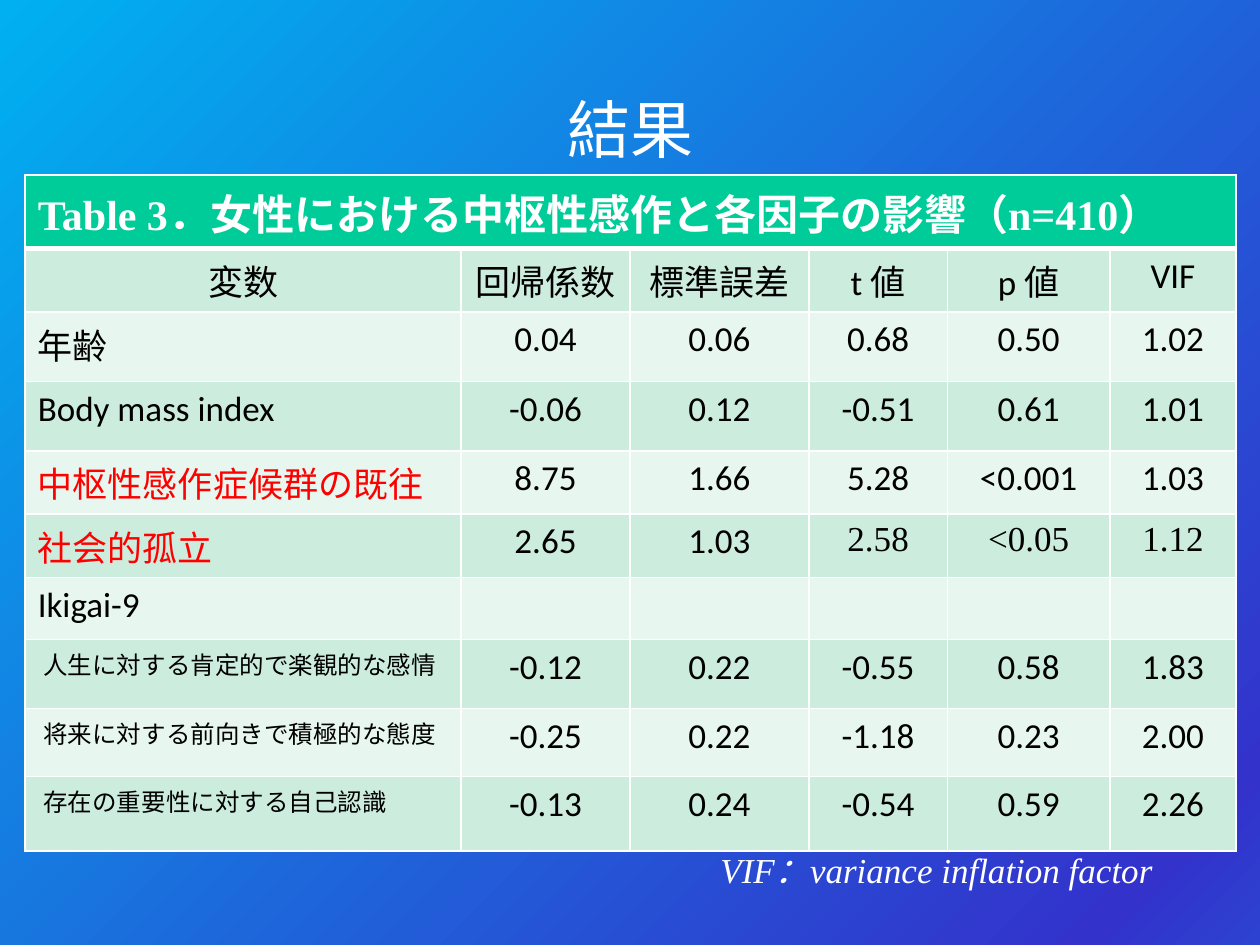
from copy import deepcopy
from dataclasses import dataclass

from lxml.etree import SubElement
from pptx import Presentation
from pptx.dml.color import RGBColor
from pptx.enum.text import MSO_ANCHOR, MSO_AUTO_SIZE, PP_ALIGN
from pptx.oxml import parse_xml
from pptx.oxml.ns import nsdecls, qn
from pptx.util import Inches, Pt

WHITE = RGBColor(0xFF, 0xFF, 0xFF)
BLACK = RGBColor(0x00, 0x00, 0x00)
RED = RGBColor(0xFF, 0x00, 0x00)
GREEN = RGBColor(0x00, 0xCC, 0x99)
BANDS = (RGBColor(0xCC, 0xEC, 0xDE), RGBColor(0xE7, 0xF6, 0xEF))
SKY = RGBColor(0x00, 0xB0, 0xF0)
INDIGO = RGBColor(0x33, 0x33, 0xCC)
ROYAL = RGBColor(0x2D, 0x42, 0xD0)
SANS = "Calibri"
SERIF = "Times New Roman"

COLUMN_WIDTHS = (3.46, 1.34, 1.42, 1.1, 1.29, 1.0)
ROW_HEIGHTS = (0.5, 0.49, 0.55, 0.55, 0.48, 0.5, 0.49, 0.55, 0.54, 0.59)
CAPTION = "Table 3．女性における中枢性感作と各因子の影響（n=410）"
HEADINGS = ("変数", "回帰係数", "標準誤差", "t 値", "p 値", "VIF")


@dataclass
class Factor:
    label: str
    values: tuple[str, ...] = ("",) * 5
    color: RGBColor = BLACK
    label_size: int = 20
    serif_from: int = 6  # first column set in the serif font


FACTORS = (
    Factor("年齢", ("0.04", "0.06", "0.68", "0.50", "1.02")),
    Factor("Body mass index", ("-0.06", "0.12", "-0.51", "0.61", "1.01")),
    Factor("中枢性感作症候群の既往", ("8.75", "1.66", "5.28", "<0.001", "1.03"), RED),
    Factor("社会的孤立", ("2.65", "1.03", "2.58", "<0.05", "1.12"), RED, serif_from=3),
    Factor("Ikigai-9"),
    Factor(" 人生に対する肯定的で楽観的な感情",
           ("-0.12", "0.22", "-0.55", "0.58", "1.83"), label_size=14),
    Factor(" 将来に対する前向きで積極的な態度",
           ("-0.25", "0.22", "-1.18", "0.23", "2.00"), label_size=14),
    Factor(" 存在の重要性に対する自己認識",
           ("-0.13", "0.24", "-0.54", "0.59", "2.26"), label_size=14),
)


def write(para, text: str, size: int, color: RGBColor, font: str = SANS,
          align: PP_ALIGN = PP_ALIGN.LEFT, bold: bool = False, italic: bool = False) -> None:
    para.text = text
    para.alignment = align
    para.font.size = Pt(size)
    para.font.color.rgb = color
    para.font.name = font
    para.font.bold = bold
    para.font.italic = italic


def paint_cell(cell, color: RGBColor, top: int = 1, bottom: int = 1) -> None:
    cell.fill.solid()
    cell.fill.fore_color.rgb = color
    properties = cell._tc.get_or_add_tcPr()
    sides = (("lnL", 1), ("lnR", 1), ("lnT", top), ("lnB", bottom))
    for index, (side, width) in enumerate(sides):
        properties.insert(index, parse_xml(
            f'<a:{side} {nsdecls("a")} w="{Pt(width)}"><a:solidFill>'
            f'<a:srgbClr val="{WHITE}"/></a:solidFill></a:{side}>'))


def place(box, left: float, top: float, width: float, height: float) -> None:
    box.left, box.top = Inches(left), Inches(top)
    box.width, box.height = Inches(width), Inches(height)


def set_background(page) -> None:
    fill = page.background.fill
    fill.gradient()
    fill.gradient_angle = 315
    first, last = fill.gradient_stops
    first.position, first.color.rgb = 0, SKY
    last.position, last.color.rgb = 1, ROYAL
    stops = next(page._element.iter(qn("a:gsLst")))
    stops.insert(1, deepcopy(stops[1]))
    middle = fill.gradient_stops[1]
    middle.position, middle.color.rgb = 0.92, INDIGO


def add_results_table(page) -> None:
    frame = page.shapes.add_table(len(ROW_HEIGHTS), len(COLUMN_WIDTHS), Inches(0.2),
                                  Inches(1.39), Inches(9.61), Inches(5.24))
    table = frame.table
    for column, width in zip(table.columns, COLUMN_WIDTHS):
        column.width = Inches(width)
    for row, height in zip(table.rows, ROW_HEIGHTS):
        row.height = Inches(height)

    # Caption row
    for cell in table.rows[0].cells:
        paint_cell(cell, GREEN, bottom=3)
    caption = table.cell(0, 0)
    caption.merge(table.cell(0, len(COLUMN_WIDTHS) - 1))
    write(caption.text_frame.paragraphs[0], CAPTION, 24, WHITE, SERIF, bold=True)

    # Column headings
    for column, heading in enumerate(HEADINGS):
        cell = table.cell(1, column)
        paint_cell(cell, BANDS[0], top=3)
        write(cell.text_frame.paragraphs[0], heading, 20, BLACK, align=PP_ALIGN.CENTER)

    # One row per factor
    for row, factor in enumerate(FACTORS, start=2):
        for column, text in enumerate((factor.label, *factor.values)):
            cell = table.cell(row, column)
            paint_cell(cell, BANDS[row % 2 == 0])
            para = cell.text_frame.paragraphs[0]
            if column == 0:
                write(para, text, factor.label_size, factor.color)
            else:
                font = SERIF if column >= factor.serif_from else SANS
                write(para, text, 20, BLACK, font, PP_ALIGN.CENTER)


def main() -> None:
    deck = Presentation()
    deck.slide_width, deck.slide_height = Inches(10), Inches(7.5)
    page = deck.slides.add_slide(deck.slide_layouts[1])
    set_background(page)

    # Title
    title = page.shapes.title
    place(title, 0.75, 0.67, 8.5, 1.25)
    title.text_frame.vertical_anchor = MSO_ANCHOR.TOP
    title.text_frame.auto_size = MSO_AUTO_SIZE.NONE
    write(title.text_frame.paragraphs[0], "結果", 36, WHITE, SERIF, PP_ALIGN.CENTER)

    # Abbreviation note under the table
    note = page.placeholders[1]
    place(note, 0.75, 1.29, 8.5, 5.96)
    note.text_frame.vertical_anchor = MSO_ANCHOR.BOTTOM
    note.text_frame.auto_size = MSO_AUTO_SIZE.NONE
    note.text_frame.margin_bottom = Inches(0.18)
    para = note.text_frame.paragraphs[0]
    write(para, "VIF：variance inflation factor", 20, WHITE, SERIF, PP_ALIGN.RIGHT, italic=True)
    properties = para._p.get_or_add_pPr()
    properties.set("marL", "0")
    properties.set("indent", "0")
    bullet = SubElement(properties, qn("a:buNone"))
    properties.find(qn("a:defRPr")).addprevious(bullet)

    add_results_table(page)
    deck.save("out.pptx")


if __name__ == "__main__":
    main()
